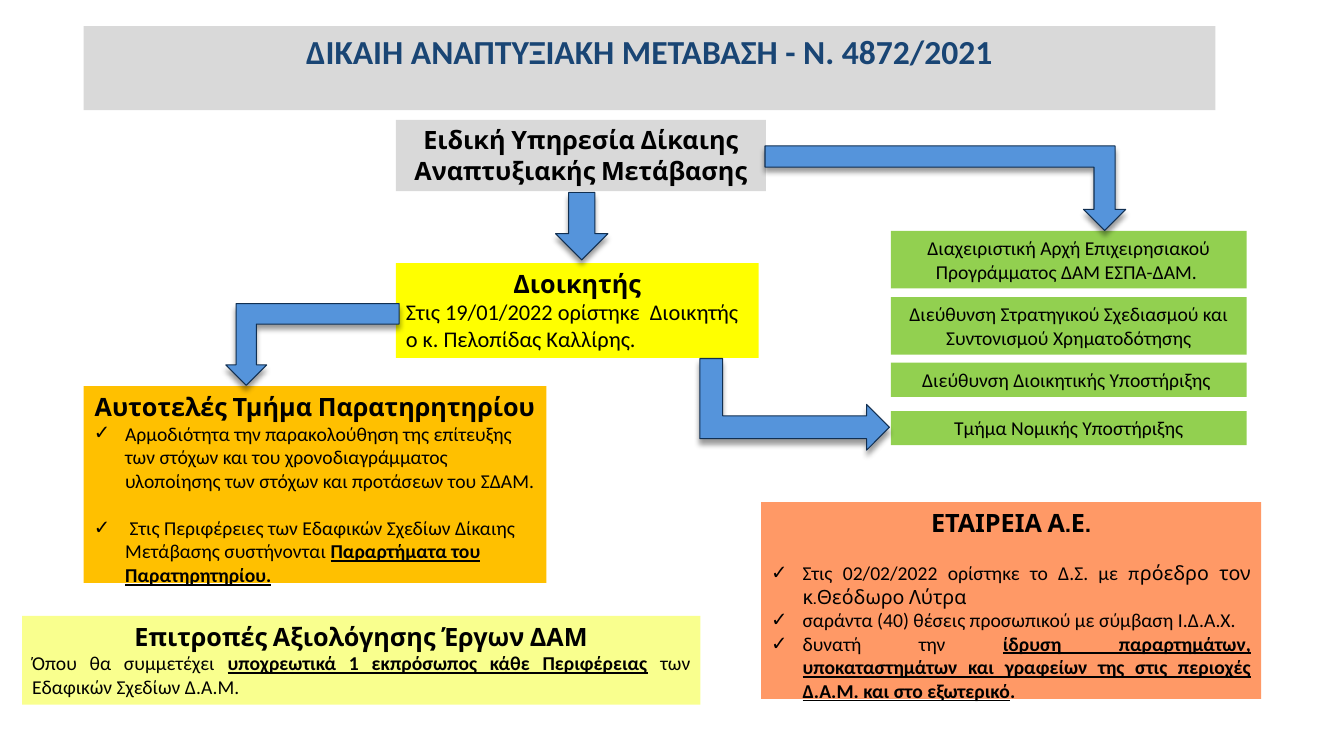
from lxml import etree
from pptx import Presentation
from pptx.dml.color import RGBColor
from pptx.enum.shapes import MSO_SHAPE
from pptx.enum.text import MSO_ANCHOR, MSO_AUTO_SIZE, PP_ALIGN
from pptx.oxml.ns import qn
from pptx.util import Cm, Pt

LEFT, MID, JUST = PP_ALIGN.LEFT, PP_ALIGN.CENTER, PP_ALIGN.JUSTIFY
TOP, FIT = MSO_ANCHOR.TOP, MSO_AUTO_SIZE.SHAPE_TO_FIT_TEXT
DOWN, BENT = MSO_SHAPE.DOWN_ARROW, MSO_SHAPE.BENT_UP_ARROW
HEAD, BODY = "Cabin", "Calibri"
HUES = {
    "gray": "D9D9D9", "green": "92D050", "yellow": "FFFF00",
    "orange": "FFC000", "coral": "FF9966", "lemon": "F9FF8E",
    "blue": "5594DB", "edge": "112F51", "navy": "194574", "black": "000000",
}


def hue(name):
    return RGBColor.from_string(HUES[name])


def plain(text, font=BODY):
    return text, font, False, False


def bold(text, line=True):
    return text, BODY, True, line


class Chart:
    def __init__(self, deck):
        self.slide = deck.slides.add_slide(deck.slide_layouts[3])
        self.title = self.slide.shapes.title
        self.lists = [self.slide.placeholders[1], self.slide.placeholders[2]]

    def place(self, shape, area, fill):
        shape.left, shape.top, shape.width, shape.height = map(Cm, area)
        shape.fill.solid()
        shape.fill.fore_color.rgb = hue(fill)
        frame = shape.text_frame
        frame.word_wrap = True
        frame.auto_size = FIT
        frame.vertical_anchor = TOP
        return frame

    def box(self, area, fill):
        return self.place(self.slide.shapes.add_textbox(*map(Cm, area)), area, fill)

    def style(self, run, size, font=BODY, heavy=False, line=False, color="black"):
        run.font.size = Pt(size)
        run.font.name = font
        run.font.bold = heavy
        run.font.underline = line
        run.font.color.rgb = hue(color)

    def head(self, frame, text, size=18, font=HEAD, heavy=True, color="black"):
        para = frame.paragraphs[0]
        para.text = text
        self.shape_para(para, MID)
        self.style(para.runs[0], size, font, heavy, False, color)

    def shape_para(self, para, align, gap=0, mark=None):
        para.alignment = align
        para.space_before = Pt(gap)
        props = para._p.get_or_add_pPr()
        dent = Cm(0.79) if mark else 0
        props.set("marL", str(dent))
        props.set("indent", str(-dent))
        if mark:
            etree.SubElement(props, qn("a:buChar")).set("char", mark)
        else:
            etree.SubElement(props, qn("a:buNone"))

    def para(self, frame, parts, align=LEFT, size=14, gap=0, mark=None):
        para = frame.add_paragraph()
        self.shape_para(para, align, gap, mark)
        for text, font, heavy, line in parts:
            run = para.add_run()
            run.text = text
            self.style(run, size, font, heavy, line)

    def arrow(self, kind, area, turn=0, flip=False):
        shape = self.slide.shapes.add_shape(kind, *map(Cm, area))
        shape.rotation = turn
        shape.fill.solid()
        shape.fill.fore_color.rgb = hue("blue")
        shape.line.color.rgb = hue("edge")
        shape.line.width = Pt(0.75)
        shape.shadow.inherit = False
        props = shape._element.spPr
        if flip:
            props.find(qn("a:xfrm")).set("flipV", "1")
        shade = etree.SubElement(props.find(qn("a:effectLst")), qn("a:outerShdw"))
        for key, value in (("blurRad", Pt(4)), ("dist", Pt(3.4)),
                           ("dir", 5400000), ("rotWithShape", 0)):
            shade.set(key, str(value))
        tint = etree.SubElement(shade, qn("a:srgbClr"))
        tint.set("val", HUES["black"])
        etree.SubElement(tint, qn("a:alpha")).set("val", "40000")


def main():
    deck = Presentation()
    deck.slide_width, deck.slide_height = Cm(33.87), Cm(19.05)
    chart = Chart(deck)

    frame = chart.place(chart.title, (2.11, 0.66, 28.52, 1.27), "gray")
    chart.head(frame, "ΔΙΚΑΙΗ ΑΝΑΠΤΥΞΙΑΚΗ ΜΕΤΑΒΑΣΗ - Ν. 4872/2021",
               24, BODY, color="navy")

    frame = chart.box((9.98, 3.02, 9.32, 1.8), "gray")
    chart.head(frame, "Ειδική Υπηρεσία Δίκαιης Αναπτυξιακής Μετάβασης")

    frame = chart.box((9.98, 6.63, 9.14, 2.39), "yellow")
    chart.head(frame, "Διοικητής")
    chart.para(frame, [plain("Στις 19/01/2022 ορίστηκε  Διοικητής ο κ. Πελοπίδας Καλλίρης.")],
               size=16)

    units = (
        (5.82, 1.45, "Διαχειριστική Αρχή Επιχειρησιακού Προγράμματος ΔΑΜ ΕΣΠΑ-ΔΑΜ. "),
        (7.49, 1.45, "Διεύθυνση Στρατηγικού Σχεδιασμού και Συντονισμού Χρηματοδότησης"),
        (9.14, 0.86, "Διεύθυνση Διοικητικής Υποστήριξης "),
        (10.36, 0.86, "Τμήμα Νομικής Υποστήριξης"),
    )
    for top, high, text in units:
        frame = chart.box((22.45, top, 8.97, high), "green")
        chart.head(frame, text, 14, BODY, False)

    frame = chart.place(chart.lists[0], (2.11, 9.73, 11.66, 5.21), "orange")
    chart.head(frame, "Αυτοτελές Τμήμα Παρατηρητηρίου")
    chart.para(frame, [plain("Αρμοδιότητα την παρακολούθηση της επίτευξης των στόχων και του "
                             "χρονοδιαγράμματος υλοποίησης των στόχων και προτάσεων του ΣΔΑΜ.")],
               mark="✓")
    chart.para(frame, [plain(" Στις Περιφέρειες των Εδαφικών Σχεδίων Δίκαιης Μετάβασης "
                             "συστήνονται "),
                       bold("Παραρτήματα του Παρατηρητηρίου.")], gap=17, mark="✓")

    frame = chart.box((0.56, 15.52, 17.09, 2.24), "lemon")
    chart.head(frame, "Επιτροπές Αξιολόγησης Έργων ΔΑΜ")
    chart.para(frame, [plain("Όπου θα συμμετέχει "),
                       bold("υποχρεωτικά 1 εκπρόσωπος κάθε Περιφέρειας"),
                       plain(" των Εδαφικών Σχεδίων Δ.Α.Μ.")], JUST)

    frame = chart.place(chart.lists[1], (19.18, 12.65, 12.6, 5.21), "coral")
    chart.head(frame, "ΕΤΑΙΡΕΙΑ Α.Ε.")
    items = (
        (17, [plain("Στις 02/02/2022 ορίστηκε το Δ.Σ. με π"),
              plain("ρόεδρο τον κ.Θεόδωρο Λύτρα", HEAD)]),
        (0, [plain("σαράντα (40) θέσεις προσωπικού με σύμβαση Ι.Δ.Α.Χ. ")]),
        (0, [plain("δυνατή την "),
             bold("ίδρυση παραρτημάτων, υποκαταστημάτων και γραφείων της "
                  "στις περιοχές Δ.Α.Μ. και στο εξωτερικό"),
             bold(".", False)]),
    )
    for gap, parts in items:
        chart.para(frame, parts, JUST, gap=gap, mark="✓")

    chart.arrow(DOWN, (14, 4.85, 1.32, 1.7))
    chart.arrow(BENT, (5.69, 7.65, 4.37, 2.06), turn=180)
    chart.arrow(BENT, (19.28, 3.68, 9.09, 2.13), flip=True)
    chart.arrow(BENT, (18.87, 7.8, 2.31, 4.78), turn=90)

    deck.save("out.pptx")


if __name__ == "__main__":
    main()
